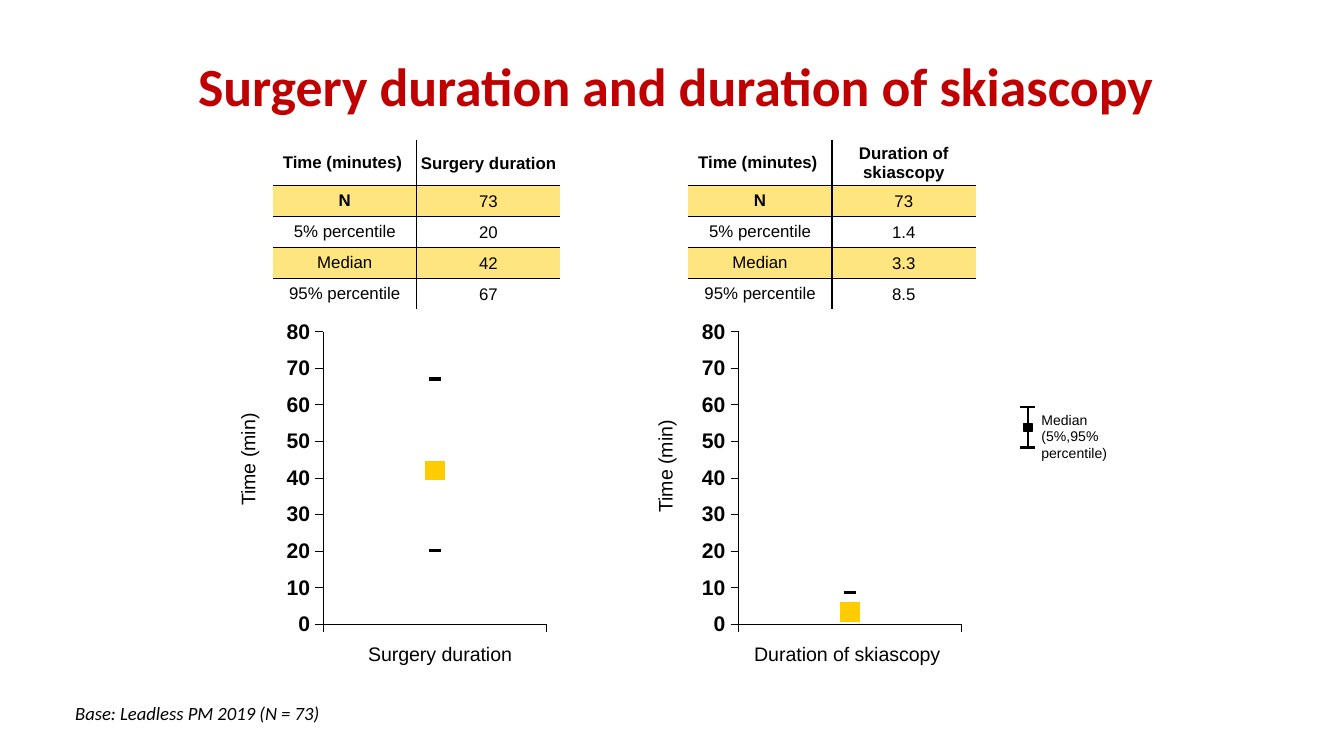
from lxml import etree
from pptx import Presentation
from pptx import util as u
from pptx.chart.data import CategoryChartData
from pptx.dml.color import RGBColor
from pptx.enum import chart as ch, shapes, text
from pptx.oxml import parse_xml
from pptx.oxml.ns import nsdecls, qn

HUES = {"ink": "000000", "red": "C00000", "band": "FFE57F", "gold": "FFCC00"}
MID = text.PP_ALIGN.CENTER
LEFT = text.PP_ALIGN.LEFT
PLAIN = "{2D5ABB26-0587-4C30-8999-92F81FD0307C}"


class Deck:
    """Holds the style and the current slide, and adds each kind of element."""

    def __init__(self, wide, high):
        self.prs = Presentation()
        self.prs.slide_width = u.Inches(wide)
        self.prs.slide_height = u.Inches(high)
        self.slide = self.prs.slides.add_slide(self.prs.slide_layouts[6])
        self.items = self.slide.shapes

    def hue(self, name):
        return RGBColor.from_string(HUES[name])

    def box(self, *at):
        return [u.Inches(v) for v in at]

    def style(self, para, size, align=MID, face="Arial", hue="ink", bold=False, slant=False):
        para.alignment = align
        font = para.font
        font.name, font.size = face, u.Pt(size)
        font.bold, font.italic = bold, slant
        font.color.rgb = self.hue(hue)

    def label(self, at, words, size, turn=0, inset=(0.1, 0.05), lead=None,
              anchor=text.MSO_ANCHOR.TOP, **look):
        shape = self.items.add_textbox(*self.box(*at))
        shape.rotation = turn
        frame = shape.text_frame
        frame.word_wrap = True
        frame.vertical_anchor = anchor
        frame.margin_left = frame.margin_right = u.Inches(inset[0])
        frame.margin_top = frame.margin_bottom = u.Inches(inset[1])
        frame.text = words
        for para in frame.paragraphs:
            self.style(para, size, **look)
            if lead:
                para.line_spacing = lead

    def line(self, x1, y1, x2, y2, width):
        rule = self.items.add_connector(shapes.MSO_CONNECTOR.STRAIGHT, *self.box(x1, y1, x2, y2))
        rule.line.width = u.Pt(width)
        rule.line.color.rgb = self.hue("ink")
        etree.SubElement(rule._element.spPr, qn("a:effectLst"))

    def rect(self, at, hue):
        shape = self.items.add_shape(shapes.MSO_SHAPE.RECTANGLE, *self.box(*at))
        shape.shadow.inherit = False
        shape.fill.solid()
        shape.fill.fore_color.rgb = self.hue(hue)
        shape.line.color.rgb = self.hue(hue)
        shape.line.width = u.Pt(0.75)

    def edge(self, cell, side):
        cell._tc.get_or_add_tcPr().append(parse_xml(
            f'<a:ln{side} {nsdecls("a")} w="12700"><a:solidFill>'
            f'<a:srgbClr val="{HUES["ink"]}"/></a:solidFill></a:ln{side}>'))

    def table(self, at, rows):
        grid = self.items.add_table(len(rows), 2, *self.box(*at)).table
        grid._tbl.tblPr.find(qn("a:tableStyleId")).text = PLAIN
        grid.first_row = grid.horz_banding = False
        for r, row in enumerate(rows):
            grid.rows[r].height = u.Inches(0.23 if r else 0.34)
            for c, words in enumerate(row):
                cell = grid.cell(r, c)
                sides = {"R": c == 0, "L": c == 1, "T": r > 0, "B": r < len(rows) - 1}
                for side in "LRTB":
                    if sides[side]:
                        self.edge(cell, side)
                if r % 2:
                    cell.fill.solid()
                    cell.fill.fore_color.rgb = self.hue("band")
                else:
                    cell.fill.background()
                cell.margin_left = cell.margin_right = u.Inches(0.01 if c else 0.03)
                cell.margin_top = u.Inches(0.01 if c else 0.04)
                cell.margin_bottom = u.Inches(0 if c else 0.04)
                cell.vertical_anchor = text.MSO_ANCHOR.MIDDLE
                cell.text = words
                self.style(cell.text_frame.paragraphs[0], 9, bold=r == 0 or words == "N")

    def chart(self, at, vals):
        data = CategoryChartData()
        data.categories = ["1"]
        for n, val in enumerate(vals, 1):
            data.add_series(f"Series {n}", [val])
        chart = self.items.add_chart(ch.XL_CHART_TYPE.LINE_MARKERS, *self.box(*at), data).chart
        chart.has_legend = chart.has_title = False
        chart.font.name, chart.font.size, chart.font.bold = "Arial", u.Pt(7.8), True
        chart.font.color.rgb = self.hue("ink")
        for axis in (chart.category_axis, chart.value_axis):
            axis.has_major_gridlines = False
            axis.major_tick_mark = ch.XL_TICK_MARK.OUTSIDE
            axis.format.line.width = u.Pt(0.25)
            axis.format.line.color.rgb = self.hue("ink")
        chart.category_axis.tick_label_position = ch.XL_TICK_LABEL_POSITION.NONE
        axis.minimum_scale, axis.maximum_scale, axis.major_unit = 0, 80, 10
        ticks = axis.tick_labels
        ticks.number_format, ticks.number_format_is_linked = "#,##0", False
        ticks.font.name, ticks.font.size, ticks.font.bold = "Arial", u.Pt(11.3), True
        ticks.font.color.rgb = self.hue("ink")
        dash = (ch.XL_MARKER_STYLE.DASH, 6, "ink")
        marks = [dash, (ch.XL_MARKER_STYLE.SQUARE, 10, "gold"), dash]
        plot = chart.plots[0]
        plot.vary_by_categories = False
        for series, (kind, size, tone) in zip(plot.series, marks):
            series.smooth = False
            series.format.line.color.rgb = self.hue(tone)
            mark = series.marker
            mark.style, mark.size = kind, size
            mark.format.fill.solid()
            mark.format.fill.fore_color.rgb = self.hue(tone)
            mark.format.line.color.rgb = self.hue(tone)
        self.place(chart, x=0.19, y=0.07, w=0.78, h=0.86)

    def place(self, chart, **spot):
        area = chart._chartSpace.chart.plotArea
        for old in area.findall(qn("c:layout")):
            area.remove(old)
        tags = '<c:layoutTarget val="inner"/><c:xMode val="edge"/><c:yMode val="edge"/>'
        tags += "".join(f'<c:{key} val="{val}"/>' for key, val in spot.items())
        area.insert(0, parse_xml(
            f'<c:layout {nsdecls("c")}><c:manualLayout>{tags}</c:manualLayout></c:layout>'))


def main():
    deck = Deck(10, 10 * 9 / 16)
    deck.label((0.5, 0.41, 9.06, 0.5), "Surgery duration and duration of skiascopy", 28.8,
               inset=(0.06, 0.03), lead=0.9, anchor=text.MSO_ANCHOR.MIDDLE,
               face="Calibri", hue="red", bold=True)
    deck.label((0.5, 5.21, 7, 0.41), "Base: Leadless PM 2019 (N = 73)", 10,
               inset=(0.06, 0.03), lead=0.9, align=LEFT, face="Calibri", slant=True)

    names = ("N", "5% percentile", "Median", "95% percentile")
    panels = [
        ("Surgery duration", (20, 42, 67), 2, (0.92, 3.28, 1.85, 0.28), 2.35),
        ("Duration of skiascopy", (1.4, 3.3, 8.5), 5.09, (3.97, 3.33, 1.96, 0.28), 5.38),
    ]
    for head, vals, x, side, foot in panels:
        deck.chart((x, 2.29, 2.13, 2.53), vals)
        deck.label(side, "Time (min)", 10.5, turn=270)
        rows = [("Time (minutes) ", head), *zip(names, map(str, (73, *vals)))]
        deck.table((x + 0.03, 1.04, 2.14, 1.25), rows)
        deck.label((foot, 4.73, 1.85, 0.28), head, 10.5)

    top, base = 3.03, 3.33
    deck.line(7.65, top, 7.65, base, 1.25)
    for y in (top, base):
        deck.line(7.59, y, 7.7, y, 1.25)
    deck.rect((7.62, 3.15, 0.06, 0.06), "ink")
    deck.label((7.65, 3.01, 1.1, 0.48), "Median\n(5%,95% percentile)", 7.5, align=LEFT)
    deck.prs.save("out.pptx")


if __name__ == "__main__":
    main()
